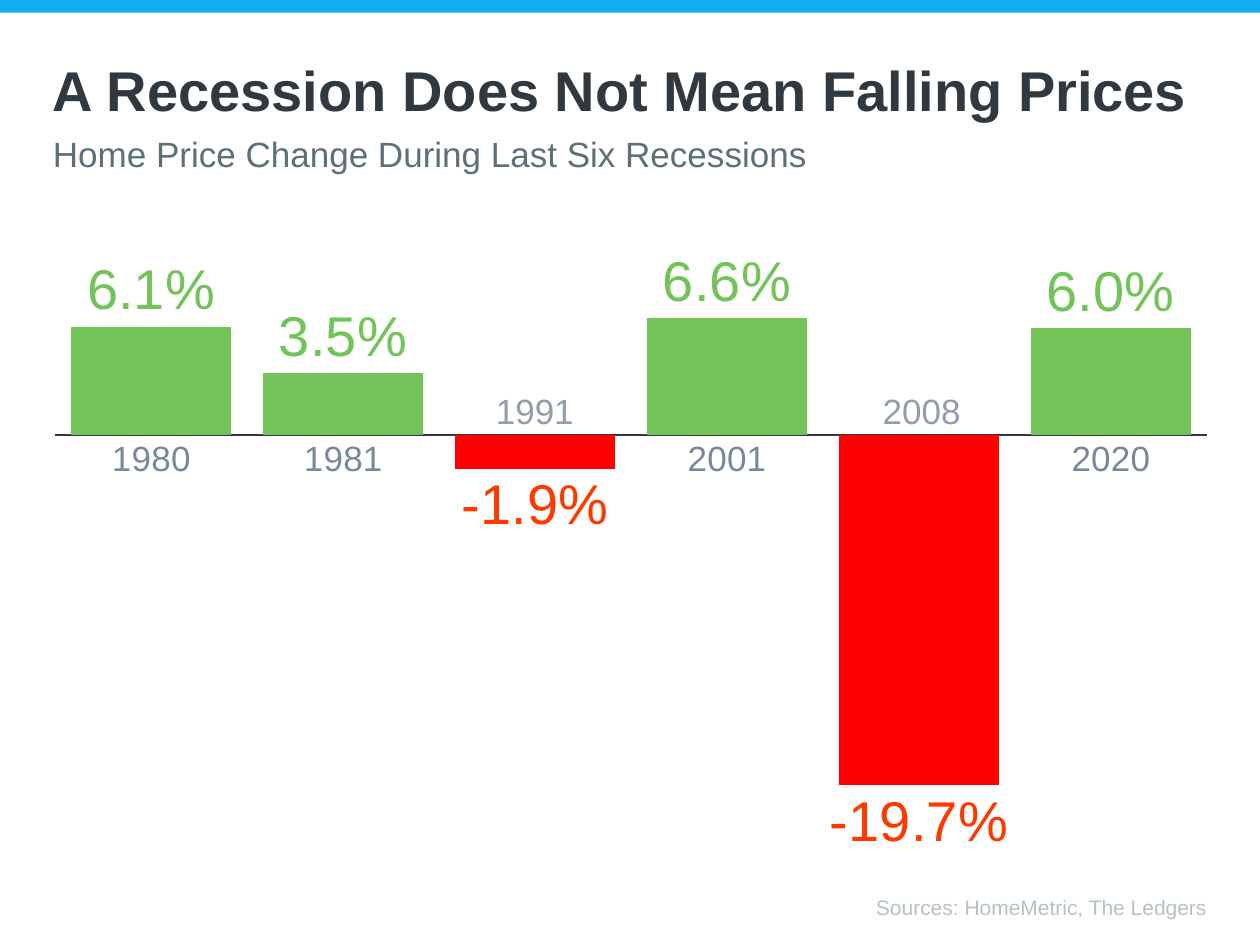
from pptx import Presentation
from pptx.chart.data import CategoryChartData
from pptx.dml.color import RGBColor
from pptx.enum.chart import XL_CHART_TYPE as ChartType, XL_LABEL_POSITION as LabelPos
from pptx.enum.chart import XL_TICK_LABEL_POSITION as TickPos, XL_TICK_MARK as TickMark
from pptx.enum.shapes import MSO_SHAPE as Shape
from pptx.enum.text import MSO_ANCHOR as Anchor, PP_ALIGN as Align
from pptx.oxml import parse_xml
from pptx.oxml.ns import nsdecls
from pptx.util import Inches, Pt

INK, SLATE, YEAR, YEAR_ABOVE, SOURCE = "303840", "5B7077", "778899", "909DAB", "B4C1C6"
GAIN, GAIN_LABEL, LOSS, LOSS_LABEL, ACCENT = "73C359", "72C45A", "FF0000", "FF3800", "14ADF0"
PRICE_CHANGES = {"1980": 0.061, "1981": 0.035, "1991": -0.019,
                 "2001": 0.066, "2008": -0.197, "2020": 0.06}
PLOT_LAYOUT = {"x": 0.02, "y": 0.02, "w": 0.96, "h": 0.96}


def color(value):
    return RGBColor.from_string(value)


def apply(target, values):
    for name, value in values.items():
        setattr(target, name, value)


class RecessionSlide:
    """Holds the typeface and the current slide and adds each kind of element."""

    def __init__(self, deck, typeface="Arial"):
        self.typeface = typeface
        self.slide = deck.slides.add_slide(deck.slide_layouts[6])

    def style(self, font, size, tone, bold=False):
        apply(font, {"name": self.typeface, "size": Pt(size), "bold": bold})
        font.color.rgb = color(tone)

    def band(self, box, tone):
        strip = self.slide.shapes.add_shape(Shape.RECTANGLE, *map(Inches, box))
        strip.shadow.inherit = False
        strip.fill.solid()
        strip.fill.fore_color.rgb = color(tone)
        strip.line.fill.background()

    def text(self, words, box, size, tone, bold=False, align=Align.LEFT):
        frame = self.slide.shapes.add_textbox(*map(Inches, box)).text_frame
        apply(frame, {"word_wrap": True, "vertical_anchor": Anchor.MIDDLE, "margin_left": 0,
                      "margin_right": 0, "margin_top": 0, "margin_bottom": 0})
        paragraph = frame.paragraphs[0]
        paragraph.alignment = align
        run = paragraph.add_run()
        run.text = words
        self.style(run.font, size, tone, bold)

    def chart(self, changes, box):
        data = CategoryChartData(number_format="0.0%")
        data.categories = [year if change > 0 else "" for year, change in changes.items()]
        data.add_series("Series 1", changes.values())
        chart = self.slide.shapes.add_chart(
            ChartType.COLUMN_CLUSTERED, *map(Inches, box), data).chart
        apply(chart, {"has_legend": False, "has_title": False})
        self.style(chart.font, 10, INK)
        self.axes(chart)
        self.columns(chart.plots[0], changes.values())
        self.layout(chart)

    def axes(self, chart):
        years, scale = chart.category_axis, chart.value_axis
        apply(years, {"major_tick_mark": TickMark.NONE, "minor_tick_mark": TickMark.NONE,
                      "tick_label_position": TickPos.NEXT_TO_AXIS,
                      "has_major_gridlines": False})
        self.style(years.tick_labels.font, 20, YEAR)
        years.format.line.color.rgb = color(INK)
        years.format.line.width = Pt(1)
        apply(scale, {"visible": False, "has_major_gridlines": False,
                      "minimum_scale": -0.25, "maximum_scale": 0.1, "major_unit": 0.05})

    def columns(self, plot, values):
        apply(plot, {"gap_width": 20, "overlap": -27, "vary_by_categories": False,
                     "has_data_labels": True})
        apply(plot.data_labels, {"show_value": True, "position": LabelPos.OUTSIDE_END,
                                 "number_format": "0.0%", "number_format_is_linked": False})
        self.style(plot.data_labels.font, 32, GAIN_LABEL)
        series = plot.series[0]
        series.invert_if_negative = False
        series.format.fill.solid()
        series.format.fill.fore_color.rgb = color(GAIN)
        for index, value in enumerate(values):
            if value < 0:
                point = series.points[index]
                point.format.fill.solid()
                point.format.fill.fore_color.rgb = color(LOSS)
                self.style(point.data_label.font, 32, LOSS_LABEL)
                point.data_label.position = LabelPos.OUTSIDE_END
        labels = series.data_labels
        apply(labels, {"show_value": True, "position": LabelPos.OUTSIDE_END,
                       "number_format": "0.0%", "number_format_is_linked": False})
        self.style(labels.font, 32, GAIN_LABEL)

    def layout(self, chart):
        modes = "".join(f'<c:{side}Mode val="edge"/>' for side in "xy")
        sizes = "".join(f'<c:{side} val="{share}"/>' for side, share in PLOT_LAYOUT.items())
        area = chart.plots[0]._element.getparent()
        for old in area.findall("{*}layout"):
            area.remove(old)
        area.insert(0, parse_xml(
            f'<c:layout {nsdecls("c")}><c:manualLayout><c:layoutTarget val="inner"/>'
            f'{modes}{sizes}</c:manualLayout></c:layout>'))


def main():
    deck = Presentation()
    apply(deck, {"slide_width": Inches(10), "slide_height": Inches(7.5)})
    page = RecessionSlide(deck)
    page.band((0, 0, 10, 0.1), ACCENT)
    page.text("Sources: HomeMetric, The Ledgers", (0.42, 7.08, 9.16, 0.24), 12, SOURCE,
              align=Align.RIGHT)
    page.text("A Recession Does Not Mean Falling Prices", (0.42, 0.42, 9.76, 0.58), 32, INK,
              bold=True)
    page.text("Home Price Change During Last Six Recessions", (0.42, 1.05, 9.17, 0.34), 20, SLATE)
    page.chart(PRICE_CHANGES, (0.25, 1.94, 9.52, 5.14))
    for year, left in {"2008": 6.9, "1991": 3.83}.items():
        page.text(year, (left, 3.04, 0.83, 0.44), 20, YEAR_ABOVE, align=Align.CENTER)
    deck.save("out.pptx")


if __name__ == "__main__":
    main()
